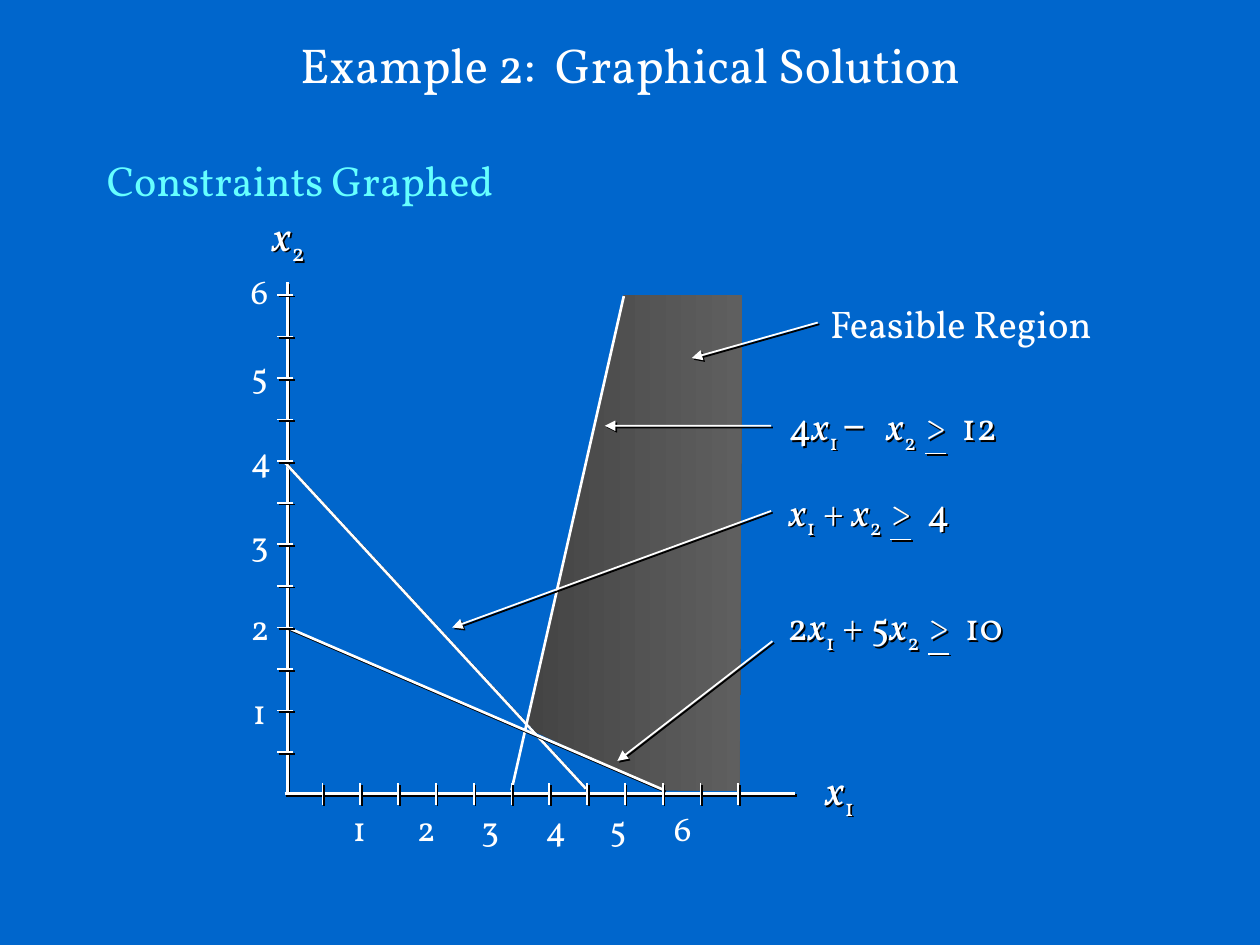
"""Build a slide that graphs three linear constraints and their feasible region."""
from lxml.etree import SubElement
from pptx import Presentation
from pptx.dml.color import RGBColor
from pptx.enum.shapes import MSO_CONNECTOR
from pptx.enum.text import MSO_ANCHOR, MSO_AUTO_SIZE, PP_ALIGN
from pptx.oxml.ns import qn
from pptx.util import Inches, Pt

COLORS = {"background": "0066CC", "white": "FFFFFF", "heading": "66FFFF",
          "shadow": "000000", "region_dark": "444444", "region_light": "5F5F5F"}
FONT = "Vollkorn"
WIDTH, HEIGHT = 10, 7.5
ORIGIN_X, ORIGIN_Y = 2.26, 6.3
COLUMN, ROW, TICKS = 0.3, 0.33, 12
LABEL_STEP = 0.51

ITALIC, SUBSCRIPT, UNDERLINE, SYMBOL = "italic", "subscript", "underline", "symbol"
X1 = [("x", ITALIC), ("1", SUBSCRIPT)]
X2 = [("x", ITALIC), ("2", SUBSCRIPT)]
AT_LEAST = [("  ", SUBSCRIPT), (">", UNDERLINE)]

FORMULAS = {
    "x2": (X2, (20.2, 21.2, 5.6, 7.2), 24),
    "x1": (X1, (64.1, 79.87, 5.6, 7.2), 24),
    "steep": ([("4", None), *X1, (" ", SUBSCRIPT), ("−  ", SYMBOL), *X2, *AT_LEAST,
               ("  12", None)], (61.2, 41.6, 21.4, 6.93), 22),
    "middle": ([*X1, (" + ", None), *X2, *AT_LEAST, ("  4", None)],
               (61.2, 50.67, 17.8, 6.8), 22),
    "flat": ([("2", None), *X1, (" + 5", None), *X2, *AT_LEAST, ("  10", None)],
             (61.1, 62.8, 22.4, 6.8), 22),
}
REGION = [(6.43, 1.7), (8.97, 12), (12.1, 12), (12.03, 0.06), (9.97, 0.09), (6.63, 1.48)]
AXES = [((0.07, 12.3), (0.07, 0)), ((0, 0), (13.5, 0))]
CONSTRAINTS = [((0, 7.97), (7.97, 0.12), True), ((6, 0.09), (8.97, 11.97), False),
               ((0.07, 4), (10.03, 0.09), True)]
ARROWS = [("steep", (8.47, 8.85)), ("middle", (4.43, 4)), ("feasible", (10.77, 10.48))]
FLAT_ARROW = ((8.8, 0.79), (12.9, 3.67))


def grid(point):
    column, row = point
    return Inches(ORIGIN_X + column * COLUMN), Inches(ORIGIN_Y - row * ROW)


def set_effects(shape, shadow):
    effects = SubElement(shape._element.spPr, qn("a:effectLst"))
    if shadow:
        outer = SubElement(effects, qn("a:outerShdw"), blurRad="0", dist="17800",
                           dir="2700000", algn="ctr", rotWithShape="0")
        SubElement(outer, qn("a:srgbClr"), val=COLORS["shadow"])


def add_line(shapes, start, end, width=1.5, shadow=True, arrow=False, label=None):
    line = shapes.add_connector(MSO_CONNECTOR.STRAIGHT, *grid(start), *grid(end))
    if label is not None:
        line.end_connect(label, 1)
    line.line.color.rgb = RGBColor.from_string(COLORS["white"])
    line.line.width = Pt(width)
    if arrow:
        SubElement(line.line._get_or_add_ln(), qn("a:headEnd"), type="triangle")
    set_effects(line, shadow)


def add_text(slide, paragraphs, box, size=20, color="white", align=PP_ALIGN.LEFT,
             anchor=MSO_ANCHOR.TOP, inset=0.1, wrap=False, gap=0, shadow=False):
    left, top, width, height = box
    shape = slide.shapes.add_textbox(
        Inches(left * WIDTH / 100), Inches(top * HEIGHT / 100),
        Inches(width * WIDTH / 100), Inches(height * HEIGHT / 100))
    frame = shape.text_frame
    frame.word_wrap = wrap
    frame.auto_size = MSO_AUTO_SIZE.NONE if wrap else MSO_AUTO_SIZE.SHAPE_TO_FIT_TEXT
    frame.vertical_anchor = anchor
    frame.margin_left = frame.margin_right = Inches(inset)
    frame.margin_top = frame.margin_bottom = Inches(inset / 2)
    for index, pieces in enumerate(paragraphs):
        paragraph = frame.add_paragraph() if index else frame.paragraphs[0]
        paragraph.alignment = align
        paragraph.space_before = Pt(gap if index else 0)
        for text, style in pieces:
            run = paragraph.add_run()
            run.text = text
            font = run.font
            font.name = "Arial" if style == SYMBOL else FONT
            font.size = Pt(size)
            font.color.rgb = RGBColor.from_string(COLORS[color])
            font.italic = style == ITALIC
            font.underline = style == UNDERLINE
            if style == SUBSCRIPT:
                font._element.set("baseline", "-25000")
    if shadow:
        set_effects(shape, True)
    return shape


def add_region(slide):
    start, *others = [grid(point) for point in REGION]
    builder = slide.shapes.build_freeform(*start)
    builder.add_line_segments(others, close=True)
    region = builder.convert_to_shape()
    region.shadow.inherit = False
    region.line.fill.background()
    region.fill.gradient()
    region.fill.gradient_angle = 0
    for stop, name in zip(region.fill.gradient_stops, ("region_dark", "region_light")):
        stop.color.rgb = RGBColor.from_string(COLORS[name])


def add_axis_labels(slide):
    numbers = [str(number) for number in range(1, 7)]
    across = add_text(slide, [[("\t".join(numbers), None)]], (27, 84.67, 38.2, 5.73), wrap=True)
    properties = across.text_frame.paragraphs[0]._p.get_or_add_pPr()
    tabs = SubElement(properties, qn("a:tabLst"))
    for index in range(1, len(numbers)):
        SubElement(tabs, qn("a:tab"), pos=str(Inches(index * LABEL_STEP)), algn="l")
    add_text(slide, [[(number, None)] for number in reversed(numbers)],
             (18.9, 27.87, 3.4, 50.27), align=PP_ALIGN.CENTER, gap=24)


def add_ticks(slide):
    across, upward = slide.shapes.add_group_shape(), slide.shapes.add_group_shape()
    for tick in range(1, TICKS + 1):
        add_line(across.shapes, (tick, 0.25), (tick, -0.26), width=1)
        add_line(upward.shapes, (-0.2, tick), (0.23, tick), width=1)


def main():
    presentation = Presentation()
    presentation.slide_width, presentation.slide_height = Inches(WIDTH), Inches(HEIGHT)
    slide = presentation.slides.add_slide(presentation.slide_layouts[6])
    slide.background.fill.solid()
    slide.background.fill.fore_color.rgb = RGBColor.from_string(COLORS["background"])

    add_text(slide, [[("Example 2:  Graphical Solution", None)]], (7.5, 0.8, 85, 11.87),
             size=28, align=PP_ALIGN.CENTER, anchor=MSO_ANCHOR.MIDDLE, wrap=True)
    add_text(slide, [[("Constraints Graphed", None)]], (7.5, 15.73, 38.3, 7.33),
             size=24, color="heading", wrap=True)
    add_region(slide)
    labels = {name: add_text(slide, [pieces], box, size=size, inset=0.14, shadow=True)
              for name, (pieces, box, size) in FORMULAS.items()}
    labels["feasible"] = add_text(slide, [[("Feasible Region", None)]],
                                  (64.9, 31.07, 23.2, 6.13), size=22)
    for start, end in AXES:
        add_line(slide.shapes, start, end)
    for start, end, shadow in CONSTRAINTS:
        add_line(slide.shapes, start, end, shadow=shadow)
    for name, tip in ARROWS:
        add_line(slide.shapes, tip, tip, width=1, arrow=True, label=labels[name])
    add_line(slide.shapes, *FLAT_ARROW, width=1, arrow=True)
    add_axis_labels(slide)
    add_ticks(slide)
    presentation.save("out.pptx")


if __name__ == "__main__":
    main()
